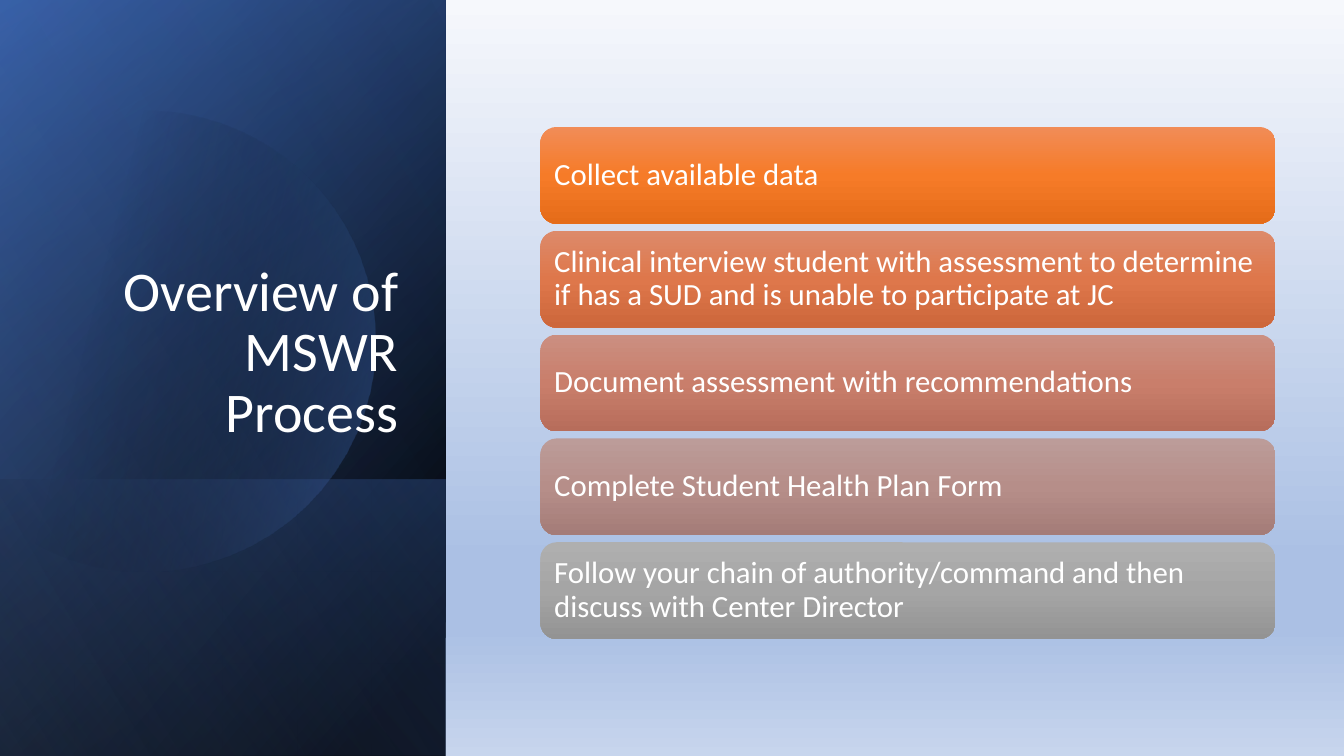
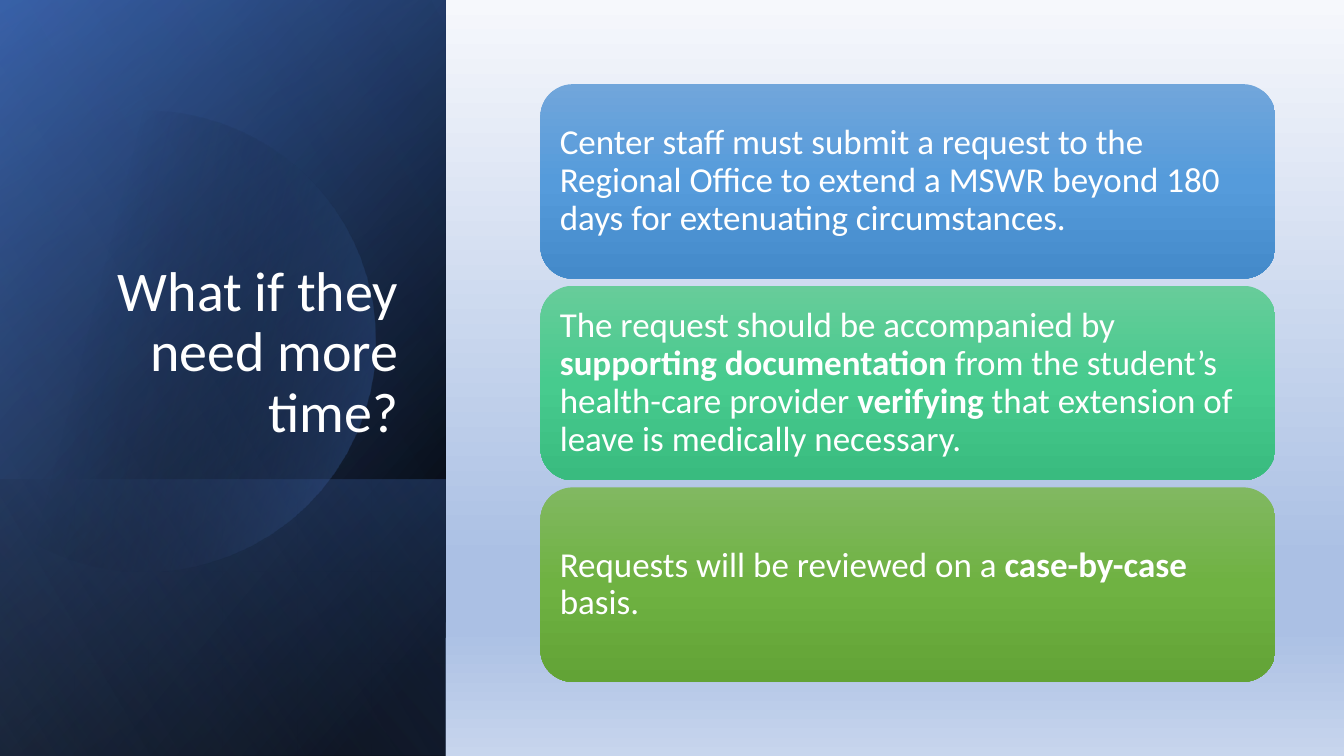
from lxml.etree import SubElement
from pptx import Presentation
from pptx.dml.color import RGBColor
from pptx.enum.shapes import MSO_SHAPE
from pptx.enum.text import MSO_ANCHOR, MSO_AUTO_SIZE, PP_ALIGN
from pptx.oxml.ns import qn
from pptx.util import Inches, Pt

FONT, WHITE = "Calibri", "FFFFFF"
PANEL_WIDTH = 4.42
CARD_LEFT, CARD_WIDTH, CARD_GAP, CARDS_MIDDLE = 5.36, 7.29, 0.07, 3.8

# Side panel layers: top, height, gradient angle, stops (position, colour, opacity)
PANEL_LAYERS = [
    (0, 7.5, 50, [(8, "000000", 100), (100, "2F5597", 100)]),
    (0, 7.5, 30, [(0, "000000", 0), (99, "4472C4", 46)]),
    (4.76, 2.74, 130, [(2, "4472C4", 29), (100, "000000", 30)]),
    (0, 7.5, 120, [(0, "000000", 0), (99, "8FAADC", 11)]),
]

# Cut circle on the panel: start, then Bezier curves (two controls and an end)
CIRCLE_START = (1.49, 1.1)
CIRCLE_CURVES = [
    [(2.46, 1.12), (3.35, 1.77), (3.63, 2.75)],
    [(3.98, 3.97), (3.28, 5.23), (2.07, 5.58)],
    [(1.31, 5.8), (0.53, 5.61), (0, 5.14)],
    [(0, 4), (0, 2.8), (0, 1.61)],
    [(0.23, 1.42), (0.5, 1.28), (0.8, 1.19)],
    [(1.03, 1.13), (1.26, 1.1), (1.49, 1.1)],
]

# Slides: title, card height, inset, text size, cards
# Cards: three gradient colours, runs (every second run is bold)
SLIDES = [
    ("Overview of MSWR Process", 0.96, 0.09, 22, [
        (("F18C57", "F67B28", "E56C19"), ["Collect available data"]),
        (("DD8A6A", "DE774B", "CD673B"),
         ["Clinical interview student with assessment to determine "
          "if has a SUD and is unable to participate at JC"]),
        (("CB8F81", "C97E6B", "B76D5B"),
         ["Document assessment with recommendations"]),
        (("BC9C99", "B68E89", "A47C78"), ["Complete Student Health Plan Form"]),
        (("AFAFAF", "A5A5A5", "939393"),
         ["Follow your chain of authority/command and then "
          "discuss with Center Director"]),
    ]),
    ("What if they need more time?", 1.93, 0.1, 25, [
        (("71A6DB", "559BDB", "448ACA"),
         ["Center staff must submit a request to the Regional Office to "
          "extend a MSWR beyond 180 days for extenuating circumstances."]),
        (("67CC9A", "47CB8E", "39BB7F"),
         ["The request should be accompanied by ", "supporting documentation ",
          "from the student’s health-care provider ", "verifying",
          " that extension of leave is medically necessary."]),
        (("81B861", "6FB242", "62A336"),
         ["Requests will be reviewed on a ", "case-by-case ", "basis."]),
    ]),
]


def paint_gradient(fill, element, angle, stops):
    """Fill with any number of stops, each with its own opacity."""
    fill.gradient()
    gradient = element.find(".//" + qn("a:gradFill"))
    gradient.find(qn("a:lin")).set("ang", str(angle * 60000))
    stop_list = gradient.find(qn("a:gsLst"))
    for old_stop in list(stop_list):
        stop_list.remove(old_stop)
    for position, color, opacity in stops:
        stop = SubElement(stop_list, qn("a:gs"), pos=str(position * 1000))
        tint = SubElement(stop, qn("a:srgbClr"), val=color)
        if opacity < 100:
            SubElement(tint, qn("a:alpha"), val=str(opacity * 1000))


def add_run(paragraph, text, size, bold=False):
    run = paragraph.add_run()
    run.text = text
    run.font.name, run.font.size, run.font.bold = FONT, Pt(size), bold
    run.font.color.rgb = RGBColor.from_string(WHITE)


prs = Presentation()
prs.slide_width, prs.slide_height = Inches(13.33), Inches(7.5)

# Shared background and title place
layout = prs.slide_layouts[5]
paint_gradient(layout.background.fill, layout.element, 90,
               [(0, "F6F8FC", 100), (74, "ABC0E4", 100),
                (83, "ABC0E4", 100), (100, "C7D5ED", 100)])
title_place = layout.placeholders[0]
title_place.left, title_place.top = Inches(0.64), Inches(1.84)
title_place.width, title_place.height = Inches(3.41), Inches(2.62)

# Outline of the circle, sampled along its curves
circle_points = []
start = CIRCLE_START
for first, second, end in CIRCLE_CURVES:
    for step in range(1, 17):
        t = step / 16
        circle_points.append(tuple(
            Inches((1 - t) ** 3 * a + 3 * (1 - t) ** 2 * t * b
                   + 3 * (1 - t) * t ** 2 * c + t ** 3 * d)
            for a, b, c, d in zip(start, first, second, end)))
    start = end

for heading, card_height, inset, text_size, cards in SLIDES:
    slide = prs.slides.add_slide(layout)

    # Side panel: layers turned by a quarter, the circle below the last one
    for number, (top, height, angle, stops) in enumerate(PANEL_LAYERS):
        if number == len(PANEL_LAYERS) - 1:
            builder = slide.shapes.build_freeform(*map(Inches, CIRCLE_START))
            builder.add_line_segments(circle_points, close=True)
            circle = builder.convert_to_shape()
            circle.shadow.inherit = False
            circle.line.fill.background()
            paint_gradient(circle.fill, circle._element, 14,
                           [(29, "000000", 0), (100, "4472C4", 43)])
        layer = slide.shapes.add_shape(
            MSO_SHAPE.RECTANGLE,
            Inches((PANEL_WIDTH - height) / 2),
            Inches(top + (height - PANEL_WIDTH) / 2),
            Inches(height), Inches(PANEL_WIDTH))
        layer.rotation = 90
        layer._element.spPr.find(qn("a:xfrm")).set("flipH", "1")
        layer.shadow.inherit = False
        layer.line.fill.background()
        paint_gradient(layer.fill, layer._element, angle, stops)

    # Title, brought in front of the panel
    title = slide.shapes.title
    slide.shapes._spTree.append(title._element)
    title.text_frame.auto_size = MSO_AUTO_SIZE.NONE
    title.text_frame.vertical_anchor = MSO_ANCHOR.BOTTOM
    title_line = title.text_frame.paragraphs[0]
    title_line.alignment, title_line.line_spacing = PP_ALIGN.RIGHT, 0.9
    add_run(title_line, heading, 40)

    # Cards, stacked around a common middle
    pitch = card_height + CARD_GAP
    first_top = CARDS_MIDDLE - (len(cards) * pitch - CARD_GAP) / 2
    for row, (colors, texts) in enumerate(cards):
        card = slide.shapes.add_shape(
            MSO_SHAPE.ROUNDED_RECTANGLE,
            Inches(CARD_LEFT), Inches(first_top + row * pitch),
            Inches(CARD_WIDTH), Inches(card_height))
        card.shadow.inherit = False
        card.line.fill.background()
        paint_gradient(card.fill, card._element, 90,
                       [(i * 50, color, 100) for i, color in enumerate(colors)])
        frame = card.text_frame
        frame.word_wrap = True
        frame.vertical_anchor = MSO_ANCHOR.MIDDLE
        frame.margin_left = frame.margin_right = Inches(inset)
        frame.margin_top = frame.margin_bottom = Inches(inset)
        sentence = frame.paragraphs[0]
        sentence.alignment, sentence.line_spacing = PP_ALIGN.LEFT, 0.9
        for index, text in enumerate(texts):
            add_run(sentence, text, text_size, bold=index % 2 == 1)

prs.save("out.pptx")
